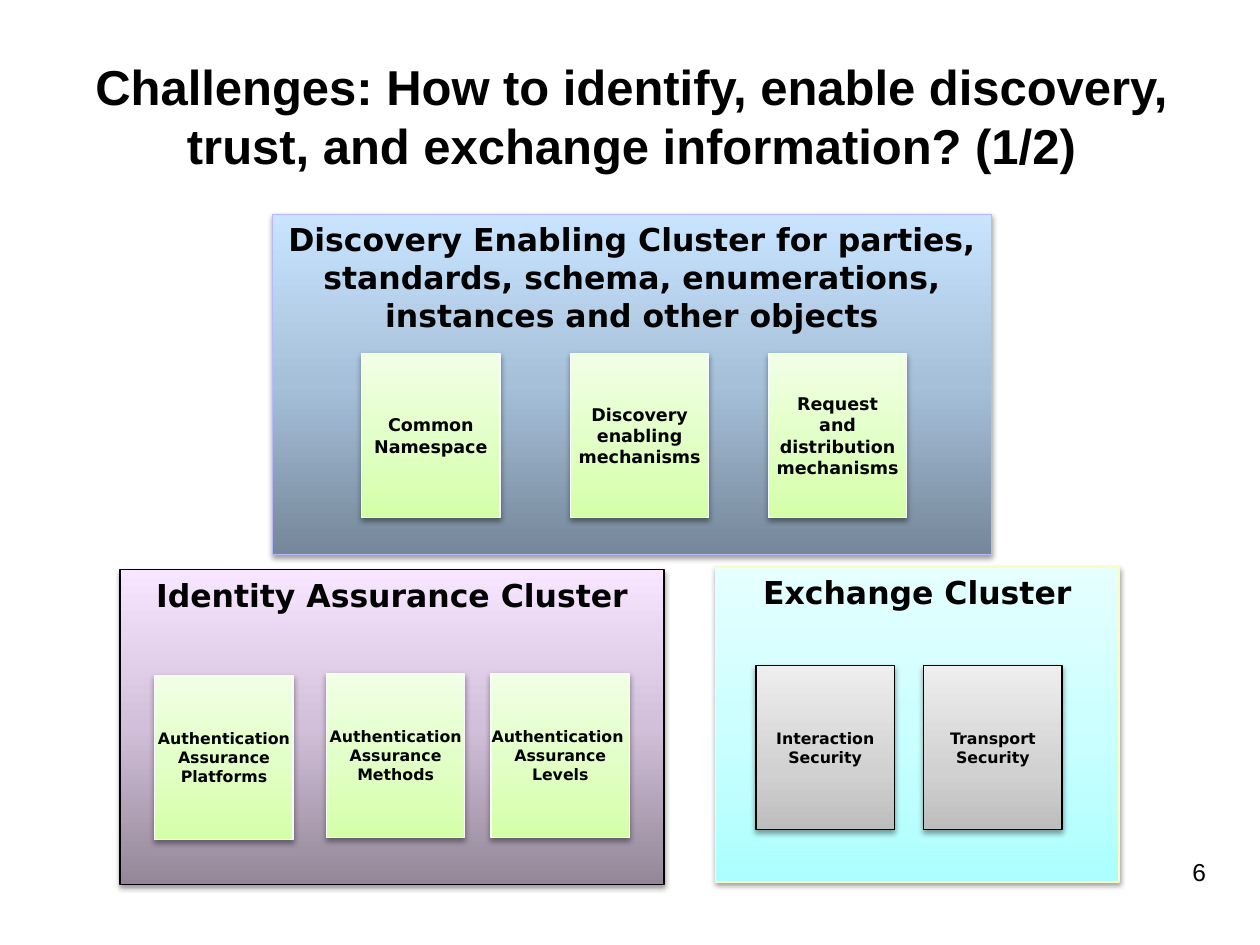
from copy import deepcopy

from lxml import etree
from pptx import Presentation
from pptx.dml.color import RGBColor
from pptx.enum.shapes import MSO_SHAPE
from pptx.enum.text import MSO_ANCHOR, PP_ALIGN
from pptx.oxml.ns import qn
from pptx.util import Cm, Pt

RECTANGLE = MSO_SHAPE.RECTANGLE
TOP, MIDDLE = MSO_ANCHOR.TOP, MSO_ANCHOR.MIDDLE
CENTER, RIGHT = PP_ALIGN.CENTER, PP_ALIGN.RIGHT

BLACK = RGBColor(0x00, 0x00, 0x00)
OFF_WHITE = RGBColor(0xF9, 0xF9, 0xF9)
CREAM = RGBColor(0xFB, 0xFB, 0xC4)
LAVENDER = RGBColor(0xB8, 0xB8, 0xFF)
CYANS = RGBColor(0xAC, 0xFF, 0xFF), RGBColor(0xCC, 0xFF, 0xFF), RGBColor(0xE6, 0xFF, 0xFF)
PURPLES = RGBColor(0x93, 0x87, 0x98), RGBColor(0xD2, 0xBF, 0xD9), RGBColor(0xF8, 0xE5, 0xFF)
BLUES = RGBColor(0x75, 0x87, 0x99), RGBColor(0xA6, 0xC0, 0xDA), RGBColor(0xC9, 0xE4, 0xFF)
GREENS = RGBColor(0xD4, 0xFF, 0xA8), RGBColor(0xE3, 0xFF, 0xC9), RGBColor(0xF1, 0xFF, 0xE5)
GRAYS = RGBColor(0xBD, 0xBD, 0xBD), RGBColor(0xD1, 0xD1, 0xD1), RGBColor(0xEE, 0xEE, 0xEE)

TITLE = {"name": "Arial", "size": Pt(28), "bold": True}
PAGE_NUMBER = {"name": "Arial", "size": Pt(14), "bold": False}
HEADING = {"name": "DejaVu Sans", "size": Pt(18), "bold": True}
LABEL = {"name": "DejaVu Sans", "size": Pt(10), "bold": True}
SMALL_LABEL = {"name": "DejaVu Sans", "size": Pt(9), "bold": True}

CARD_WIDTH, CARD_HEIGHT = 2.79, 3.3


class ClusterSlide:
    def __init__(self, presentation):
        self.slide = presentation.slides.add_slide(presentation.slide_layouts[6])

    def set_text(self, shape, text, font, alignment, anchor, wrap=True, side_margin=0.25):
        frame = shape.text_frame
        frame.text = text
        settings = {
            "word_wrap": wrap,
            "vertical_anchor": anchor,
            "margin_left": Cm(side_margin),
            "margin_right": Cm(side_margin),
        }
        for name, value in settings.items():
            setattr(frame, name, value)
        for paragraph in frame.paragraphs:
            paragraph.alignment = alignment
            for name, value in font.items():
                setattr(paragraph.font, name, value)
            paragraph.font.color.rgb = BLACK

    def text(self, box, text, font, alignment, anchor):
        shape = self.slide.shapes.add_textbox(*map(Cm, box))
        self.set_text(shape, text, font, alignment, anchor)

    def gradient(self, shape, colors, middle):
        shape.fill.gradient()
        shape.fill.gradient_angle = 90
        stop_list = shape._element.spPr.find(f".//{qn('a:gsLst')}")
        stop_list.insert(1, deepcopy(stop_list[0]))
        for stop, color, position in zip(shape.fill.gradient_stops, colors, (0, middle, 1)):
            stop.color.rgb = color
            stop.position = position

    def shadow(self, shape):
        shape.shadow.inherit = False
        effects = shape._element.spPr.find(qn("a:effectLst"))
        shadow = etree.SubElement(
            effects, qn("a:outerShdw"),
            blurRad="40000", dist="20000", dir="5400000", rotWithShape="0",
        )
        color = etree.SubElement(shadow, qn("a:srgbClr"), val=str(BLACK))
        etree.SubElement(color, qn("a:alpha"), val="38000")

    def panel(self, box, colors, outline, middle=0.5):
        shape = self.slide.shapes.add_shape(RECTANGLE, *map(Cm, box))
        self.gradient(shape, colors, middle)
        shape.line.color.rgb = outline
        shape.line.width = Pt(0.75)
        self.shadow(shape)
        return shape

    def cluster(self, box, text, colors, outline):
        self.set_text(self.panel(box, colors, outline), text, HEADING, CENTER, TOP)

    def green_card(self, left, top, text, font, side_margin):
        shape = self.panel((left, top, CARD_WIDTH, CARD_HEIGHT), GREENS, OFF_WHITE)
        self.set_text(shape, text, font, CENTER, MIDDLE, False, side_margin)

    def gray_card(self, left, top, text):
        shape = self.panel((left, top, CARD_WIDTH, CARD_HEIGHT), GRAYS, BLACK, 0.35)
        self.set_text(shape, text, SMALL_LABEL, CENTER, MIDDLE)


def main():
    presentation = Presentation()
    presentation.slide_width, presentation.slide_height = Cm(25.4), Cm(19.05)
    page = ClusterSlide(presentation)

    page.text(
        (1.3, 1.12, 22.86, 2.41),
        "Challenges: How to identify, enable discovery, trust, and exchange information? (1/2)",
        TITLE, CENTER, MIDDLE,
    )
    page.cluster((14.43, 11.43, 8.13, 6.35), "Exchange Cluster", CYANS, CREAM)
    page.cluster((2.42, 11.48, 10.97, 6.35), "Identity Assurance Cluster", PURPLES, BLACK)
    page.cluster(
        (5.49, 4.32, 14.5, 6.86),
        "Discovery Enabling Cluster for parties, standards, schema, enumerations, "
        "instances and other objects",
        BLUES, LAVENDER,
    )

    for left, text, side_margin in (
        (7.29, "Common\vNamespace", 0.25),
        (11.5, "Discovery\venabling\vmechanisms", 0.25),
        (15.49, "Request\vand\vdistribution\vmechanisms", 0.13),
    ):
        page.green_card(left, 7.13, text, LABEL, side_margin)

    for left, top, text in (
        (3.12, 13.62, "Authentication\vAssurance\nPlatforms"),
        (6.58, 13.58, "Authentication\vAssurance\nMethods"),
        (9.9, 13.58, "Authentication \vAssurance\vLevels"),
    ):
        page.green_card(left, top, text, SMALL_LABEL, 0)

    for left, text in ((15.24, "Interaction\vSecurity"), (18.62, "Transport\vSecurity")):
        page.gray_card(left, 13.42, text)

    page.text((18.21, 17.15, 6.35, 1.32), "6", PAGE_NUMBER, RIGHT, TOP)
    presentation.save("out.pptx")


if __name__ == "__main__":
    main()
